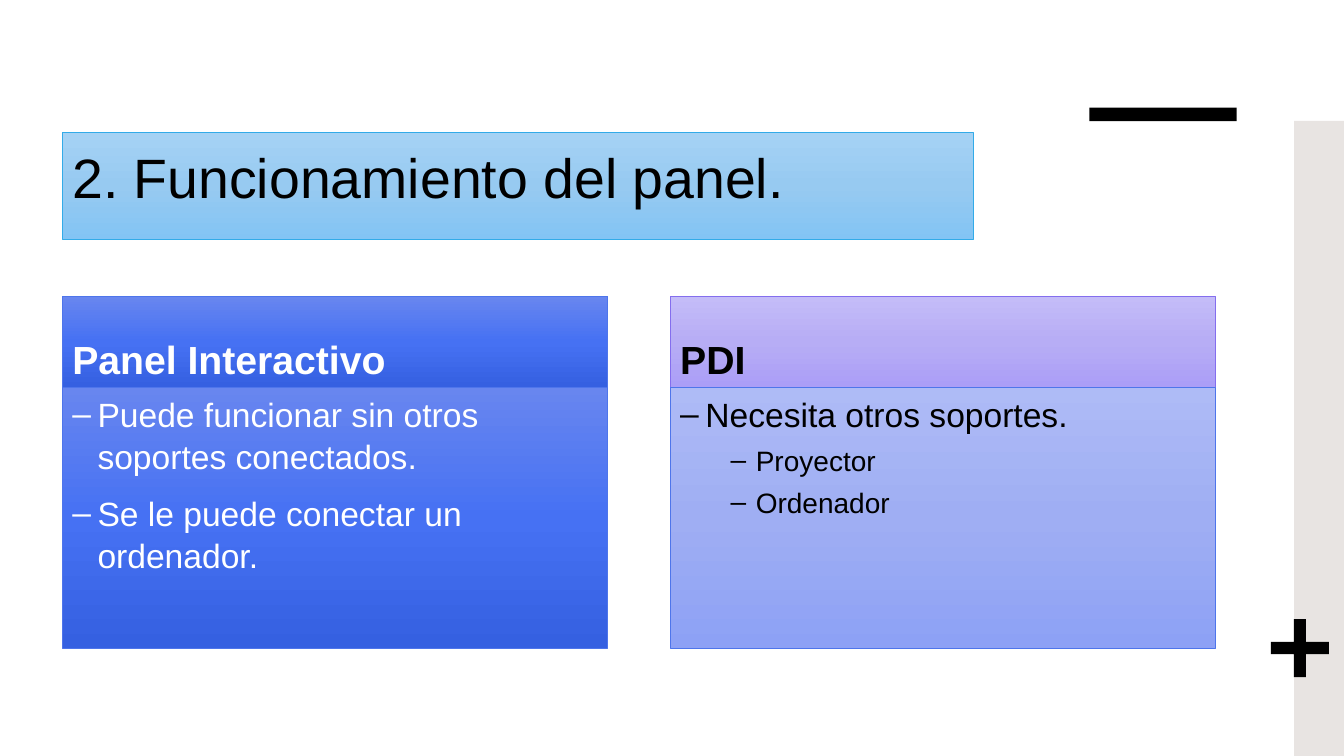
from pptx import Presentation
from pptx.util import Pt
from pptx.dml.color import RGBColor
from pptx.enum.shapes import MSO_SHAPE
from pptx.enum.text import MSO_ANCHOR, PP_ALIGN
from pptx.oxml.ns import qn
from lxml.etree import SubElement
from copy import deepcopy

TITLE = "2. Funcionamiento del panel."
CARDS = [
    {"head": "Panel Interactivo", "tint": ("royal", "royal"), "ink": "white",
     "items": [("Puede funcionar sin otros soportes conectados.", 0),
               ("Se le puede conectar un ordenador.", 0)]},
    {"head": "PDI", "tint": ("lilac", "mist"), "ink": "black",
     "items": [("Necesita otros soportes.", 0), ("Proyector", 1), ("Ordenador", 1)]},
]
COLORS = {"black": "000000", "white": "FFFFFF", "band": "E8E4E2",
          "cyan": "33ABE8", "blue": "4E75EB", "violet": "846EEE"}
GRADS = {
    "sky": (("A5D2F4", "97CAF1", "83C4F4"), "cyan"),
    "royal": (("6886EF", "4671F3", "3560E1"), "blue"),
    "lilac": (("C4BCF8", "B7ADF5", "AB9EF7"), "violet"),
    "mist": (("AEBBF6", "9FAEF3", "8DA1F5"), "blue"),
}
DECOR = [
    (MSO_SHAPE.RECTANGLE, (924.4, 86.4, 35.6, 453.6), "band"),
    (MSO_SHAPE.RECTANGLE, (778.2, 76.9, 105.1, 9.6), "black"),
    (MSO_SHAPE.CROSS, (907.8, 442.2, 41.4, 41.4), "black"),
]
LEVELS = [(24, 10, 18), (20, 5, 54)]
LEFT, STEP, WIDE = 44.6, 434.2, 389.6
TOP, HEAD, BODY = 211.6, 64.9, 186.6


def add_part(slide, kind, box):
    """Add a shape without shadow or outline."""
    part = slide.shapes.add_shape(kind, *[Pt(n) for n in box])
    part.shadow.inherit = False
    part.line.fill.background()
    return part


def add_panel(slide, box, tint, anchor=MSO_ANCHOR.TOP):
    """Add a box with a three-stop vertical gradient."""
    panel = add_part(slide, MSO_SHAPE.RECTANGLE, box)
    hues, edge = GRADS[tint]
    fill = panel.fill
    fill.gradient()
    fill.gradient_angle = 270
    stops = panel._element.spPr.find(qn("a:gradFill")).find(qn("a:gsLst"))
    stops.append(deepcopy(stops[-1]))
    for i, (stop, hue) in enumerate(zip(fill.gradient_stops, hues)):
        stop.position = i / 2
        stop.color.rgb = RGBColor.from_string(hue)
    panel.line.color.rgb = RGBColor.from_string(COLORS[edge])
    panel.line.width = Pt(0.5)
    panel.text_frame.word_wrap = True
    panel.text_frame.vertical_anchor = anchor
    return panel.text_frame


def style(para, size, ink, bold=False):
    """Set the look of one paragraph."""
    para.alignment = PP_ALIGN.LEFT
    for run in para.runs:
        font = run.font
        font.name, font.size, font.bold = "Arial", Pt(size), bold
        font.color.rgb = RGBColor.from_string(COLORS[ink])


def add_dash(para, left):
    """Give a paragraph a hanging dash."""
    props = para._p.get_or_add_pPr()
    props.set("marL", str(Pt(left)))
    props.set("indent", str(-Pt(18)))
    SubElement(props, qn("a:buFont")).set("typeface", "Arial")
    SubElement(props, qn("a:buChar")).set("char", "–")


def add_card(slide, left, card):
    """Add a heading box with its list below."""
    top, low = card["tint"]
    frame = add_panel(slide, (left, TOP, WIDE, HEAD), top, MSO_ANCHOR.BOTTOM)
    frame.text = card["head"]
    style(frame.paragraphs[0], 28, card["ink"], True)
    frame = add_panel(slide, (left, TOP + HEAD, WIDE, BODY), low)
    frame.text = "\n".join(text for text, level in card["items"])
    for para, (text, level) in zip(frame.paragraphs, card["items"]):
        size, gap, indent = LEVELS[level]
        para.level = level
        para.line_spacing = 1.05
        para.space_before = Pt(gap)
        style(para, size, card["ink"])
        add_dash(para, indent)


def main():
    """Build and save the slide."""
    deck = Presentation()
    deck.slide_width, deck.slide_height = Pt(960), Pt(540)
    slide = deck.slides.add_slide(deck.slide_layouts[6])
    for kind, box, hue in DECOR:
        part = add_part(slide, kind, box)
        part.fill.solid()
        part.fill.fore_color.rgb = RGBColor.from_string(COLORS[hue])
        if kind == MSO_SHAPE.CROSS:
            part.adjustments[0] = 0.395
    frame = add_panel(slide, (LEFT, 94.8, 651, 76.3), "sky")
    frame.margin_top = Pt(7.7)
    frame.text = TITLE
    style(frame.paragraphs[0], 39.6, "black")
    for i, card in enumerate(CARDS):
        add_card(slide, LEFT + i * STEP, card)
    deck.save("out.pptx")


if __name__ == "__main__":
    main()
